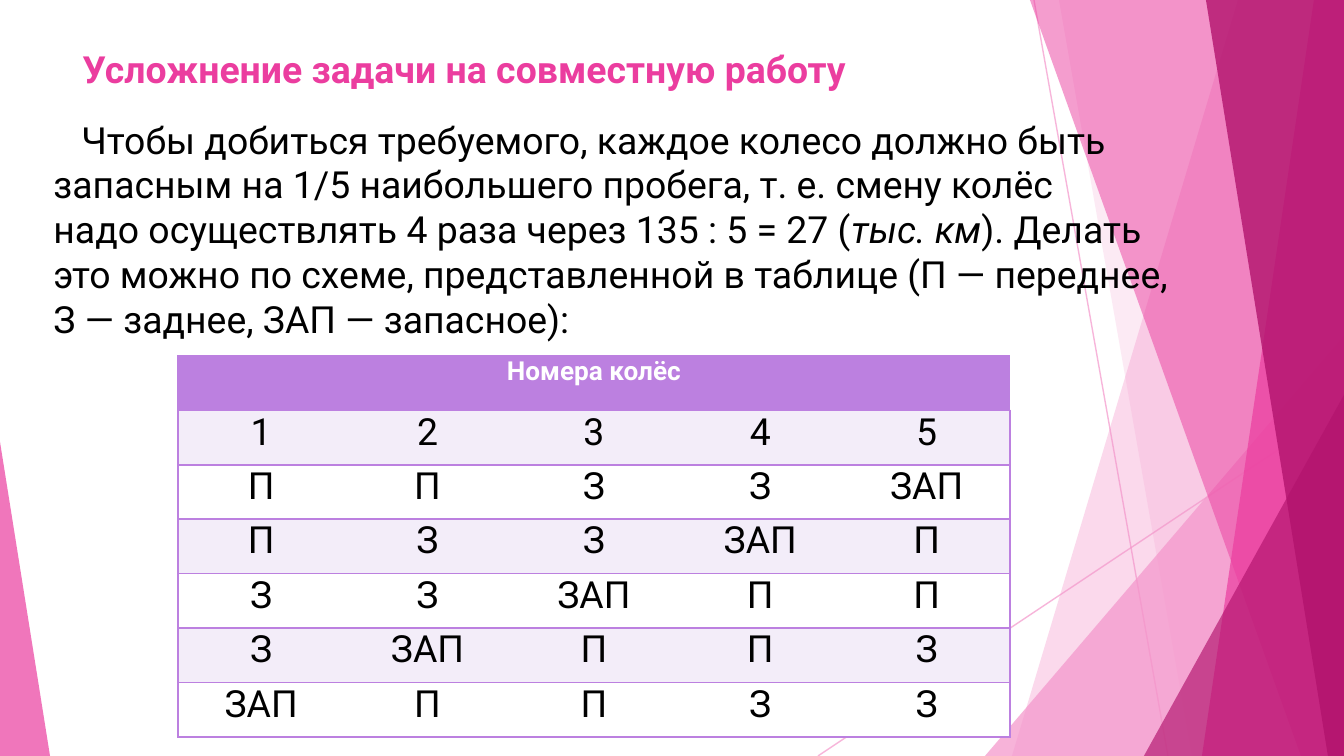
from lxml import etree
from pptx import Presentation
from pptx.dml.color import RGBColor
from pptx.enum.shapes import MSO_CONNECTOR, MSO_SHAPE
from pptx.enum.text import MSO_ANCHOR, MSO_AUTO_SIZE, PP_ALIGN
from pptx.oxml.ns import qn
from pptx.util import Pt

EMU_PER_PX = 914400 / 134.4
STRAIGHT = MSO_CONNECTOR.STRAIGHT
TRIANGLE = MSO_SHAPE.RIGHT_TRIANGLE
ISOSCELES = MSO_SHAPE.ISOSCELES_TRIANGLE
TOP = MSO_ANCHOR.TOP
NO_AUTOFIT = MSO_AUTO_SIZE.NONE
LEFT, CENTER = PP_ALIGN.LEFT, PP_ALIGN.CENTER

FONT = "Roboto"
PINK = RGBColor(0xEB, 0x3D, 0x9F)
LIGHT_PINK = RGBColor(0xF4, 0x96, 0xCB)
DARK_PINK = RGBColor(0xB2, 0x13, 0x6D)
PURPLE = RGBColor(0xBC, 0x80, 0xE0)
PALE_PURPLE = RGBColor(0xF3, 0xED, 0xF9)
WHITE = RGBColor(0xFF, 0xFF, 0xFF)
BLACK = RGBColor(0, 0, 0)
NO_TABLE_STYLE = "{2D5ABB26-0587-4C30-8999-92F81FD0307C}"

WIDTH, HEIGHT = 1344, 756


def px(length):
    return round(length * EMU_PER_PX)


def set_alpha(shape, percent):
    """Make the only colour of a shape or line partly transparent."""
    color = shape._element.spPr.find(".//" + qn("a:srgbClr"))
    etree.SubElement(color, qn("a:alpha"), val=str(percent * 1000))


presentation = Presentation()
presentation.slide_width, presentation.slide_height = px(WIDTH), px(HEIGHT)
slide = presentation.slides.add_slide(presentation.slide_layouts[1])
shapes = slide.shapes
title, body = slide.placeholders

# Background: thin lines, then translucent bands and triangles
for ends in [(1034, 0, 1168, HEIGHT), (WIDTH, 406, 818, HEIGHT)]:
    line = shapes.add_connector(STRAIGHT, *map(px, ends))
    line.line.color.rgb = LIGHT_PINK
    line.line.width = Pt(0.75)
    set_alpha(line, 70)
    etree.SubElement(line._element.spPr, qn("a:effectLst"))

# A band is (top x, bottom x) up to the right edge; a triangle is a box and apex
facets = [
    ((1238, 1012), None, LIGHT_PINK, 36),
    ((1059, 1192), None, LIGHT_PINK, 20),
    ((985, 336, 359, 420), 1, LIGHT_PINK, 72),
    ((1030, 1301), None, PINK, 50),
    ((1314, 1202), None, PINK, 70),
    ((1206, 1328), None, DARK_PINK, 80),
    ((1144, 395, 200, 361), 1, DARK_PINK, 66),
    ((0, 442, 50, 314), 0, PINK, 70),
]
for place, apex, color, alpha in facets:
    if apex is None:
        top_x, bottom_x = place
        builder = shapes.build_freeform(top_x, 0, scale=EMU_PER_PX)
        builder.add_line_segments([(WIDTH, 0), (WIDTH, HEIGHT), (bottom_x, HEIGHT)])
        facet = builder.convert_to_shape()
    else:
        facet = shapes.add_shape(ISOSCELES, *map(px, place))
        facet.adjustments[0] = apex
    facet.shadow.inherit = False
    facet.fill.solid()
    facet.fill.fore_color.rgb = color
    facet.line.fill.background()
    set_alpha(facet, alpha)

# Title and text stand in front of the background
for placeholder, box in [(title, (69, 39, 1208, 74)), (body, (40, 110, 1214, 511))]:
    shapes._spTree.append(placeholder._element)
    placeholder.left, placeholder.top, placeholder.width, placeholder.height = map(px, box)
    frame = placeholder.text_frame
    frame_format = {"word_wrap": True, "auto_size": NO_AUTOFIT, "vertical_anchor": TOP}
    for name, value in frame_format.items():
        setattr(frame, name, value)

title.text_frame.text = "Усложнение задачи на совместную работу"
body_lines = [
    [("Чтобы добиться требуемого, каждое колесо должно быть запасным на 1/5 "
      "наибольшего пробега, т. е. смену колёс", False)],
    [("надо осуществлять 4 раза через 135 : 5 = 27 (", False),
     ("тыс. км", True), ("). Делать", False)],
    [("это можно по схеме, представленной в таблице (П — переднее,", False)],
    [("З — заднее, ЗАП — запасное):", False)],
]
paragraph = body.text_frame.paragraphs[0]
properties = paragraph._p.get_or_add_pPr()
properties.set("marL", "0")
properties.set("indent", str(px(28)))
etree.SubElement(properties, qn("a:buNone"))
for index, body_line in enumerate(body_lines):
    if index:
        paragraph.add_line_break()
    for text, italic in body_line:
        run = paragraph.add_run()
        run.text = text
        run.font.italic = italic

for placeholder, color, bold in [(title, PINK, True), (body, BLACK, False)]:
    paragraph = placeholder.text_frame.paragraphs[0]
    paragraph.alignment = LEFT
    paragraph.space_before = Pt(0)
    for run in paragraph.runs:
        for name, value in {"name": FONT, "size": Pt(20), "bold": bold}.items():
            setattr(run.font, name, value)
        run.font.color.rgb = color

# Wheel rotation table
wheel_rows = [
    ["Номера колёс", "", "", "", ""],
    ["1", "2", "3", "4", "5"],
    ["П", "П", "З", "З", "ЗАП"],
    ["П", "З", "З", "ЗАП", "П"],
    ["З", "З", "ЗАП", "П", "П"],
    ["З", "ЗАП", "П", "П", "З"],
    ["ЗАП", "П", "П", "З", "З"],
]
last_column = len(wheel_rows[0]) - 1
table = shapes.add_table(
    len(wheel_rows), last_column + 1, px(178), px(356), px(832), px(381)
).table
table._tbl.tblPr.find(qn("a:tableStyleId")).text = NO_TABLE_STYLE
table.cell(0, 0).merge(table.cell(0, last_column))
cell_format = {
    "margin_left": px(9), "margin_right": px(9),
    "margin_top": 0, "margin_bottom": 0, "vertical_anchor": TOP,
}
for row, values in enumerate(wheel_rows):
    is_header = row == 0
    row_fill = PURPLE if is_header else PALE_PURPLE if row % 2 else WHITE
    for column, value in enumerate(values):
        cell = table.cell(row, column)
        for name, setting in cell_format.items():
            setattr(cell, name, setting)
        cell.fill.solid()
        cell.fill.fore_color.rgb = row_fill
        paragraph = cell.text_frame.paragraphs[0]
        paragraph.alignment = CENTER
        font = paragraph.font
        if value:
            run = paragraph.add_run()
            run.text = value
            font = run.font
        font.name = FONT
        font.size = Pt(14 if is_header else 20)
        font.bold = is_header
        font.color.rgb = WHITE if is_header else BLACK

        sides = ["lnT", "lnB"]
        if column == last_column:
            sides.insert(0, "lnR")
        if column == 0:
            sides.insert(0, "lnL")
        cell_properties = cell._tc.get_or_add_tcPr()
        for position, side in enumerate(sides):
            border = etree.Element(qn("a:" + side), w=str(Pt(1)))
            border_fill = etree.SubElement(border, qn("a:solidFill"))
            etree.SubElement(border_fill, qn("a:srgbClr"), val=str(PURPLE))
            cell_properties.insert(position, border)

presentation.save("out.pptx")
